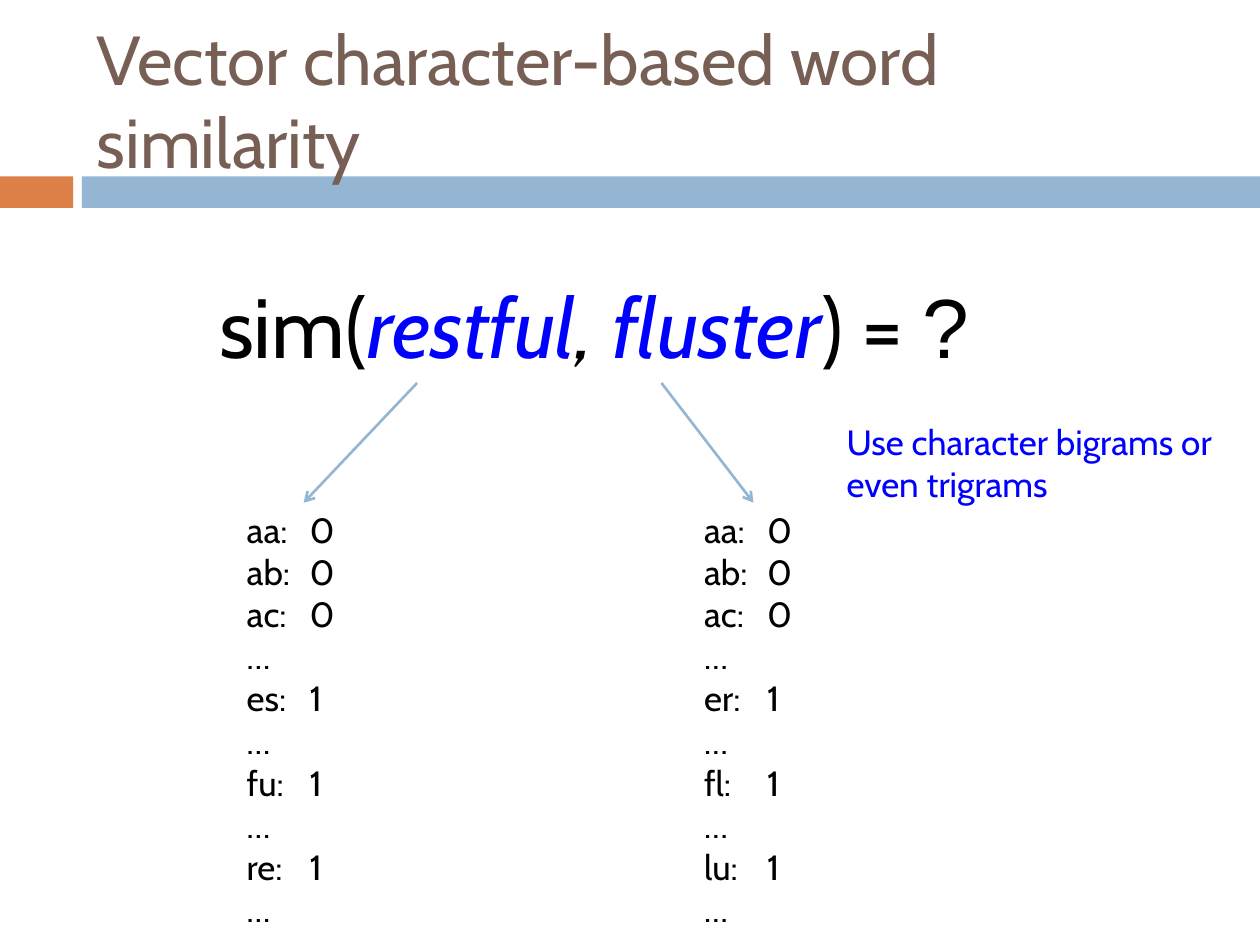
from pptx import Presentation
from pptx import util as u
from pptx.dml.color import RGBColor
from pptx.enum import shapes, text
from pptx.oxml.ns import qn
from lxml import etree

WIDTH, HEIGHT = 10, 7.5
FONT = "Cabin"
BLACK, BLUE, BROWN = "000000", "0000FF", "775F55"
ORANGE, STEEL = "DD8047", "94B6D2"


def color(value):
    return RGBColor.from_string(value)


def add_text(slide, box, paragraphs, size, anchor=text.MSO_ANCHOR.TOP, wrap=True, tab=None):
    """Each paragraph is a list of runs: (words, colour, italic, font)."""
    shape = slide.shapes.add_textbox(*map(u.Inches, box))
    frame = shape.text_frame
    frame.word_wrap = wrap
    frame.vertical_anchor = anchor
    for index, runs in enumerate(paragraphs):
        paragraph = frame.paragraphs[0] if index == 0 else frame.add_paragraph()
        if tab:
            stops = etree.SubElement(paragraph._p.get_or_add_pPr(), qn("a:tabLst"))
            etree.SubElement(stops, qn("a:tab"), pos=str(u.Inches(tab)), algn="l")
        for words, fill, italic, font in runs:
            run = paragraph.add_run()
            run.text = words
            run.font.size = u.Pt(size)
            run.font.name = font
            run.font.italic = italic
            run.font.color.rgb = color(fill)


def add_band(slide, top, height, split, gap):
    """Two-coloured band across the slide."""
    for left, right, fill in ((0, split, ORANGE), (split + gap, WIDTH, STEEL)):
        bar = slide.shapes.add_shape(
            shapes.MSO_SHAPE.RECTANGLE,
            *map(u.Inches, (left, top, right - left, height)))
        bar.shadow.inherit = False
        bar.fill.solid()
        bar.fill.fore_color.rgb = color(fill)
        bar.line.fill.background()


def add_title(slide, box, words):
    add_text(slide, box, [[(words, BROWN, False, FONT)]], 39.6, text.MSO_ANCHOR.MIDDLE)


def add_formula(slide, box):
    add_text(slide, box, [[
        ("sim(", BLACK, False, FONT),
        ("restful", BLUE, True, FONT),
        (",", BLACK, True, FONT),
        (" fluster", BLUE, True, FONT),
        (") = ", BLACK, False, FONT),
        ("?", BLACK, False, "Arial"),
    ]], 48)


def add_vector(slide, box, present):
    """Bigram counts: three zeros, then the bigrams present, with gaps."""
    rows = [f"{bigram}:\t0" for bigram in ("aa", "ab", "ac")] + ["…"]
    for bigram in present:
        rows += [f"{bigram}:\t1", "…"]
    add_text(slide, box, [[(row, BLACK, False, FONT)] for row in rows], 20,
             wrap=False, tab=0.5)


def add_arrow(slide, start, end):
    arrow = slide.shapes.add_connector(
        shapes.MSO_CONNECTOR.STRAIGHT, *map(u.Inches, start + end))
    arrow.line.color.rgb = color(STEEL)
    arrow.line.width = u.Pt(1.5)
    etree.SubElement(arrow.line._get_or_add_ln(), qn("a:tailEnd"), type="arrow")
    etree.SubElement(arrow._element.spPr, qn("a:effectLst"))


def main():
    presentation = Presentation()
    presentation.slide_width = u.Inches(WIDTH)
    presentation.slide_height = u.Inches(HEIGHT)
    slide = presentation.slides.add_slide(presentation.slide_layouts[6])

    # Heading
    add_band(slide, top=1.4, height=0.25, split=0.58, gap=0.07)
    add_title(slide, (0.67, 0.25, 8.92, 1.08), "Vector character-based word similarity")

    # Question
    formula_top, formula_height, vector_top = 2.13, 0.91, 3.99
    add_formula(slide, (1.64, formula_top, 8.36, formula_height))

    # Each word points to its vector
    words = (
        (1.86, 3.31, 2.41, ("es", "fu", "re")),
        (5.49, 5.25, 5.98, ("er", "fl", "lu")),
    )
    for left, start, end, present in words:
        add_vector(slide, (left, vector_top, 0.97, 3.47), present)
        add_arrow(slide, (start, formula_top + formula_height), (end, vector_top))

    # Hint
    add_text(slide, (6.62, 3.29, 3.38, 0.77),
             [[("Use character bigrams or even trigrams", BLUE, False, FONT)]], 20)

    presentation.save("out.pptx")


if __name__ == "__main__":
    main()
